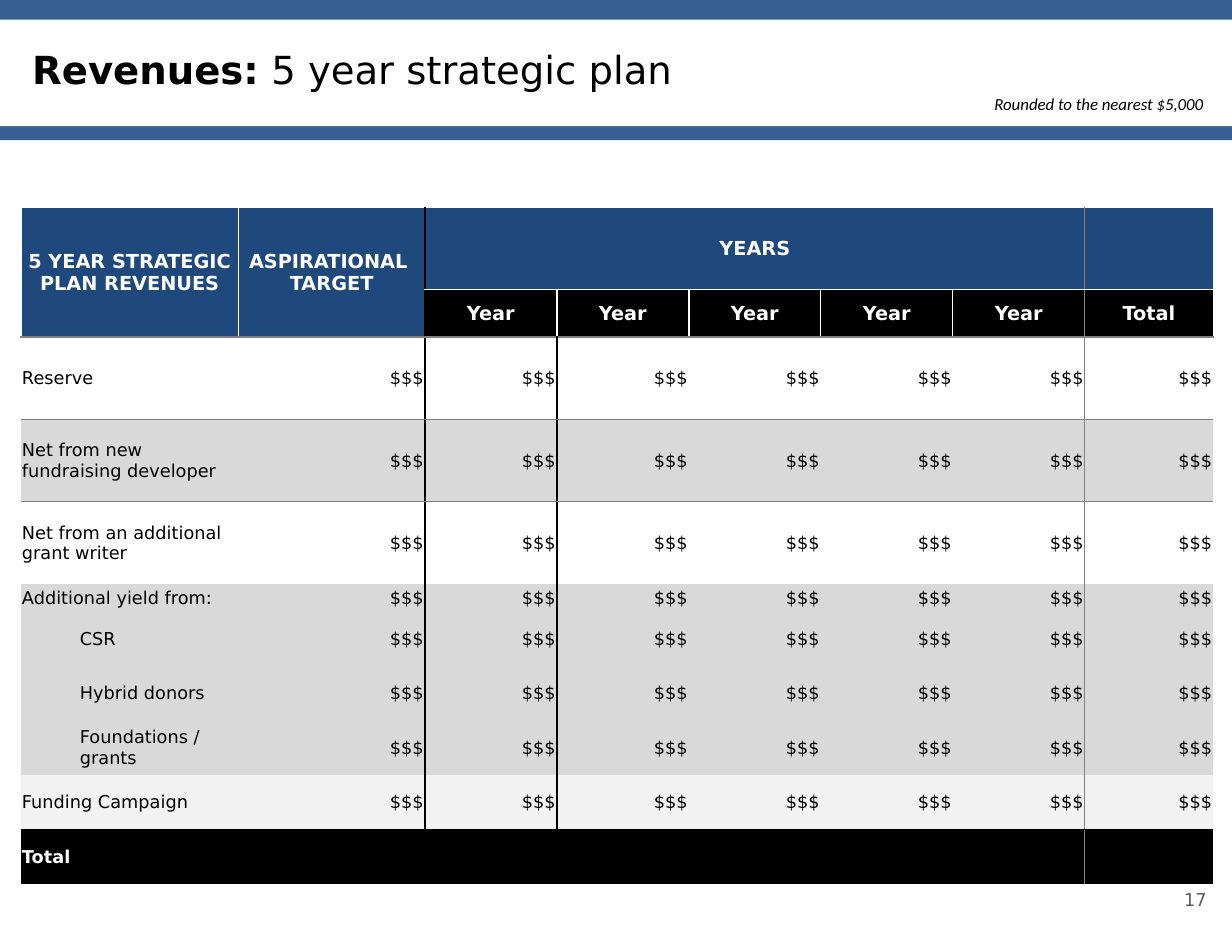
from lxml import etree
from pptx import Presentation
from pptx.dml.color import RGBColor
from pptx.enum.shapes import MSO_SHAPE as Shape
from pptx.enum.text import MSO_ANCHOR as Anchor, PP_ALIGN as Align
from pptx.oxml.ns import qn
from pptx.util import Inches, Pt

# Content
TITLE = [("Revenues:", True), (" 5 year strategic plan", False)]
NOTE = "Rounded to the nearest $5,000"
PAGE = "17"
MONEY = ["$$$"] * 7
HEADS = [
    ["5 YEAR STRATEGIC PLAN REVENUES", "ASPIRATIONAL \vTARGET", "YEARS"] + [""] * 5,
    ["", ""] + ["Year"] * 5 + ["Total"],
]
# label, indented, fill, row height
ROWS = [
    ("Reserve", False, None, 0.71),
    ("Net from new fundraising developer", False, "D9D9D9", 0.71),
    ("Net from an additional grant writer", False, None, 0.71),
    ("Additional yield from:", False, "D9D9D9", 0.24),
    ("CSR", True, "D9D9D9", 0.47),
    ("Hybrid donors", True, "D9D9D9", 0.47),
    ("Foundations / grants", True, "D9D9D9", 0.47),
    ("Funding Campaign", False, "F2F2F2", 0.47),
]
TOTAL = ["Total"] + [""] * 7

# Look
SANS = "DejaVu Sans"
BLUE, NAVY, BLACK, WHITE, GREY = "376092", "1F497D", "000000", "FFFFFF", "808080"
WIDTHS = [1.88, 1.61] + [1.14] * 5 + [1.11]
HEIGHTS = [0.71, 0.24] + [row[3] for row in ROWS] + [0.47]
MERGES = [(0, 0, 1, 0), (0, 1, 1, 1), (0, 2, 0, 6)]
ACROSS = {0: WHITE, 1: WHITE, 2: GREY, 3: GREY, 10: BLACK}  # rules above these rows
DOWN = {2: BLACK, 7: GREY}  # rules left of these columns
HEAD = dict(size=Pt(12), name=SANS, bold=True, color=WHITE)
BODY = dict(size=Pt(11), name=SANS, bold=False, color=BLACK)
SUM = dict(BODY, bold=True, color=WHITE)


def rgb(code):
    return RGBColor.from_string(code)


def style(font, form):
    for key, val in form.items():
        if key == "color":
            font.color.rgb = rgb(val)
        else:
            setattr(font, key, val)


def band(top, high, color):
    box = slide.shapes.add_shape(Shape.RECTANGLE, 0, Inches(top), deck.slide_width, Inches(high))
    box.shadow.inherit = False
    box.fill.solid()
    box.fill.fore_color.rgb = rgb(color)
    box.line.fill.background()


def label(place, runs, align=Align.LEFT, anchor=Anchor.TOP, wrap=True):
    frame = slide.shapes.add_textbox(*map(Inches, place)).text_frame
    frame.word_wrap = wrap
    frame.vertical_anchor = anchor
    para = frame.paragraphs[0]
    para.alignment = align
    for text, form in runs:
        run = para.add_run()
        run.text = text
        style(run.font, form)


def edge(props, side, color):
    line = etree.SubElement(props, qn("a:ln" + side), w=str(Pt(1)))
    fill = etree.SubElement(line, qn("a:solidFill"))
    etree.SubElement(fill, qn("a:srgbClr"), val=color)


def borders(cell, row, col):
    low, right = row + cell.span_height, col + cell.span_width
    plain = WHITE if row < 2 else None
    sides = {"L": DOWN.get(col, plain), "R": DOWN.get(right, plain),
             "T": ACROSS.get(row), "B": ACROSS.get(low)}
    props = cell._tc.get_or_add_tcPr()
    for side, color in sides.items():
        if color:
            edge(props, side, color)


def write(cell, text, form, align, fill, indent=False):
    for side in ("left", "right", "top"):
        setattr(cell, "margin_" + side, Inches(0.01))
    cell.margin_bottom = 0
    cell.vertical_anchor = Anchor.MIDDLE
    if fill:
        cell.fill.solid()
        cell.fill.fore_color.rgb = rgb(fill)
    else:
        cell.fill.background()
    if not text:
        return
    cell.text = text
    para = cell.text_frame.paragraphs[0]
    para.alignment = align
    if indent:
        para.level = 1
        props = para._p.get_or_add_pPr()
        props.set("marL", str(Inches(0.5)))
        props.set("indent", "0")
    for run in para.runs:
        style(run.font, form)


deck = Presentation()
deck.slide_width, deck.slide_height = Inches(10.64), Inches(8.14)
slide = deck.slides.add_slide(deck.slide_layouts[6])

# Header bands and title
band(0, 1.21, BLUE)
band(0.17, 0.92, WHITE)
label((0.18, 0.35, 10.29, 0.5),
      [(text, dict(size=Pt(24), name=SANS, bold=bold, color=BLACK)) for text, bold in TITLE])

# Revenue table
grid = slide.shapes.add_table(len(HEIGHTS), len(WIDTHS), Inches(0.18), Inches(1.79),
                              Inches(sum(WIDTHS)), Inches(sum(HEIGHTS))).table
grid.first_row = grid.horz_banding = False
bare = "{2D5ABB26-0587-4C30-8999-92F81FD0307C}"  # no style, no grid
grid._tbl.tblPr.find(qn("a:tableStyleId")).text = bare
for col, wide in zip(grid.columns, WIDTHS):
    col.width = Inches(wide)
for row, high in zip(grid.rows, HEIGHTS):
    row.height = Inches(high)
for top, left, low, right in MERGES:
    grid.cell(top, left).merge(grid.cell(low, right))

lines = [(HEADS[0], HEAD, NAVY, False), (HEADS[1], HEAD, BLACK, False)]
lines += [([name] + MONEY, BODY, fill, deep) for name, deep, fill, _ in ROWS]
lines += [(TOTAL, SUM, BLACK, False)]
for r, (texts, form, fill, deep) in enumerate(lines):
    for c, text in enumerate(texts):
        cell = grid.cell(r, c)
        if cell.is_spanned:
            continue
        borders(cell, r, c)
        align = Align.CENTER if r < 2 else Align.RIGHT if c else Align.LEFT
        write(cell, text, form, align, fill, deep and c == 0)

# Page number and rounding note
label((8.13, 7.55, 2.39, 0.43), [(PAGE, dict(size=Pt(11), name=SANS, color="595959"))],
      Align.RIGHT, Anchor.MIDDLE)
label((8.49, 0.76, 2.04, 0.28),
      [(NOTE, dict(size=Pt(10.5), name="Calibri", italic=True, color=BLACK))], wrap=False)

deck.save("out.pptx")
